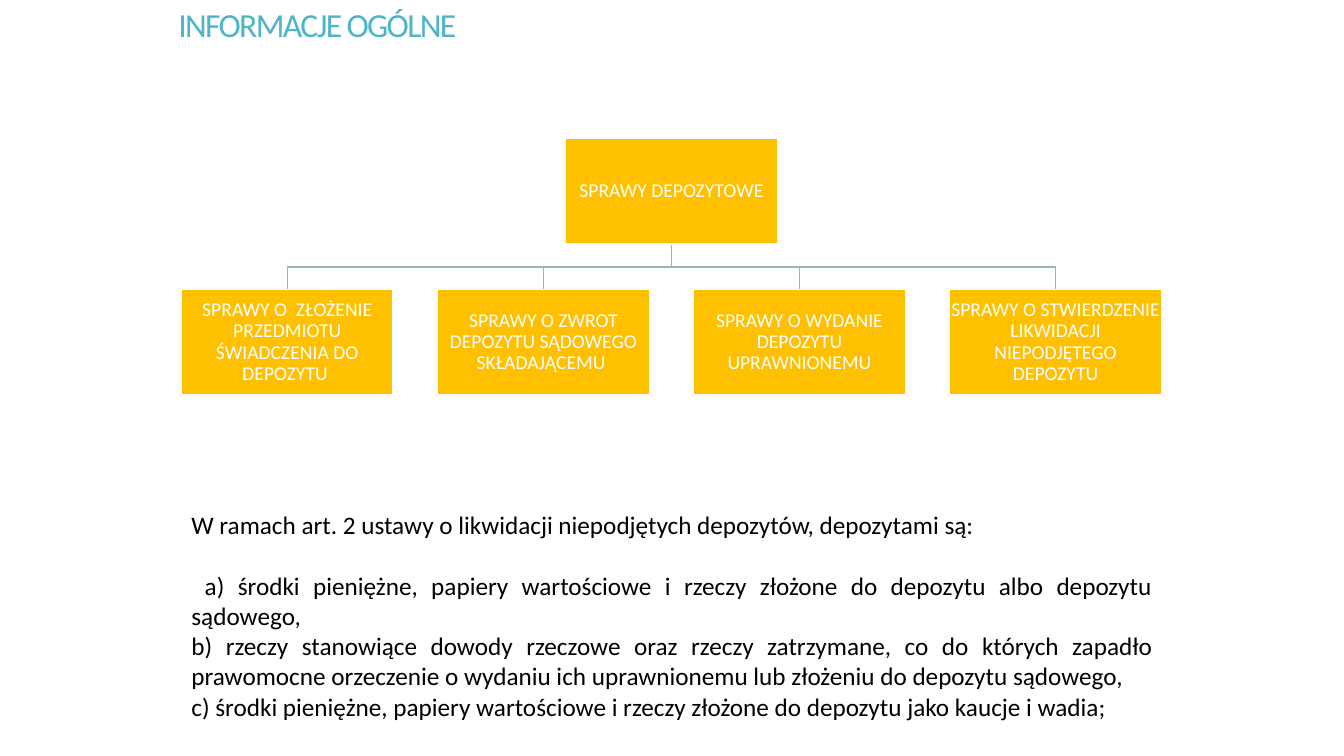
from pptx import Presentation
from pptx.dml.color import RGBColor
from pptx.enum.shapes import MSO_SHAPE as Shape
from pptx.enum.text import MSO_ANCHOR as Anchor, MSO_AUTO_SIZE as AutoSize, PP_ALIGN as Align
from pptx.util import Pt

PX = 9144  # EMU in one px, 100 px to the inch
COLOURS = {
    "title": "50B4C8",
    "box": "FFC000",
    "light": "FFFFFF",
    "branch": "97B7AA",
    "body": "000000",
}
BOX_WIDTH, BOX_HEIGHT = 210, 105
ROOT_LEFT, ROOT_TOP = 561, 137
CASE_LEFT, CASE_TOP, CASE_STEP = 180, 287, 254
ROOT_CASE = "SPRAWY DEPOZYTOWE"
CASES = [
    "SPRAWY O  ZŁOŻENIE PRZEDMIOTU ŚWIADCZENIA DO DEPOZYTU ",
    "SPRAWY O ZWROT DEPOZYTU SĄDOWEGO SKŁADAJĄCEMU ",
    "SPRAWY O WYDANIE DEPOZYTU UPRAWNIONEMU",
    "SPRAWY O STWIERDZENIE LIKWIDACJI NIEPODJĘTEGO DEPOZYTU",
]
DEPOSITS = [
    "W ramach art. 2 ustawy o likwidacji niepodjętych depozytów, depozytami są:",
    " a) środki pieniężne, papiery wartościowe i rzeczy złożone do depozytu "
    "albo depozytu sądowego, ",
    "b) rzeczy stanowiące dowody rzeczowe oraz rzeczy zatrzymane, co do których "
    "zapadło prawomocne orzeczenie o wydaniu ich uprawnionemu lub złożeniu do "
    "depozytu sądowego, ",
    "c) środki pieniężne, papiery wartościowe i rzeczy złożone do depozytu jako "
    "kaucje i wadia; ",
]


def colour(name):
    return RGBColor.from_string(COLOURS[name])


def emu(*lengths):
    return [length * PX for length in lengths]


def format_text(frame, size, colour_name, align, line_spacing=1.0):
    frame.word_wrap = True
    for para in frame.paragraphs:
        para.alignment = align
        para.line_spacing = line_spacing
        for span in para.runs:
            span.font.name = "Calibri"
            span.font.size = Pt(size)
            span.font.color.rgb = colour(colour_name)


def add_title(slide, text):
    frame = slide.shapes.add_textbox(*emu(167, 0, 1000, 53)).text_frame
    frame.text = text
    frame.vertical_anchor = Anchor.MIDDLE
    format_text(frame, 24, "title", Align.LEFT, 0.9)
    frame.paragraphs[0].runs[0]._r.get_or_add_rPr().set("spc", "-120")


def add_branch(slide, case_left):
    """Draw the stepped line from the root box down to one case box."""
    start_x, start_y = ROOT_LEFT + BOX_WIDTH // 2, ROOT_TOP + BOX_HEIGHT
    end_x = case_left + BOX_WIDTH // 2
    middle_y = (start_y + CASE_TOP) // 2 + 1
    builder = slide.shapes.build_freeform(start_x, start_y, scale=PX)
    builder.add_line_segments(
        [(start_x, middle_y), (end_x, middle_y), (end_x, CASE_TOP)], close=False
    )
    branch = builder.convert_to_shape()
    branch.shadow.inherit = False
    branch.fill.background()
    branch.line.color.rgb = colour("branch")
    branch.line.width = Pt(1)


def add_case_box(slide, left, top, text):
    box = slide.shapes.add_shape(Shape.RECTANGLE, *emu(left, top, BOX_WIDTH, BOX_HEIGHT))
    box.shadow.inherit = False
    box.fill.solid()
    box.fill.fore_color.rgb = colour("box")
    box.line.color.rgb = colour("light")
    box.line.width = Pt(1)
    frame = box.text_frame
    frame.margin_left = frame.margin_right = frame.margin_top = frame.margin_bottom = 0
    frame.vertical_anchor = Anchor.MIDDLE
    frame.text = text
    format_text(frame, 14, "light", Align.CENTER, 0.9)


def add_deposit_list(slide, lines):
    frame = slide.shapes.add_textbox(*emu(180, 500, 973, 252)).text_frame
    frame.text = "\n".join(lines)
    format_text(frame, 18, "body", Align.JUSTIFY)
    frame.auto_size = AutoSize.SHAPE_TO_FIT_TEXT
    frame.paragraphs[0].space_after = Pt(22)


def main():
    deck = Presentation()
    deck.slide_width, deck.slide_height = emu(1333, 750)
    slide = deck.slides.add_slide(deck.slide_layouts[6])

    add_title(slide, ROOT_TITLE)
    case_lefts = [CASE_LEFT + CASE_STEP * index for index in range(len(CASES))]
    for left in case_lefts:
        add_branch(slide, left)
    add_case_box(slide, ROOT_LEFT, ROOT_TOP, ROOT_CASE)
    for left, text in zip(case_lefts, CASES):
        add_case_box(slide, left, CASE_TOP, text)
    add_deposit_list(slide, DEPOSITS)

    deck.save("out.pptx")


ROOT_TITLE = "INFORMACJE OGÓLNE"

if __name__ == "__main__":
    main()
